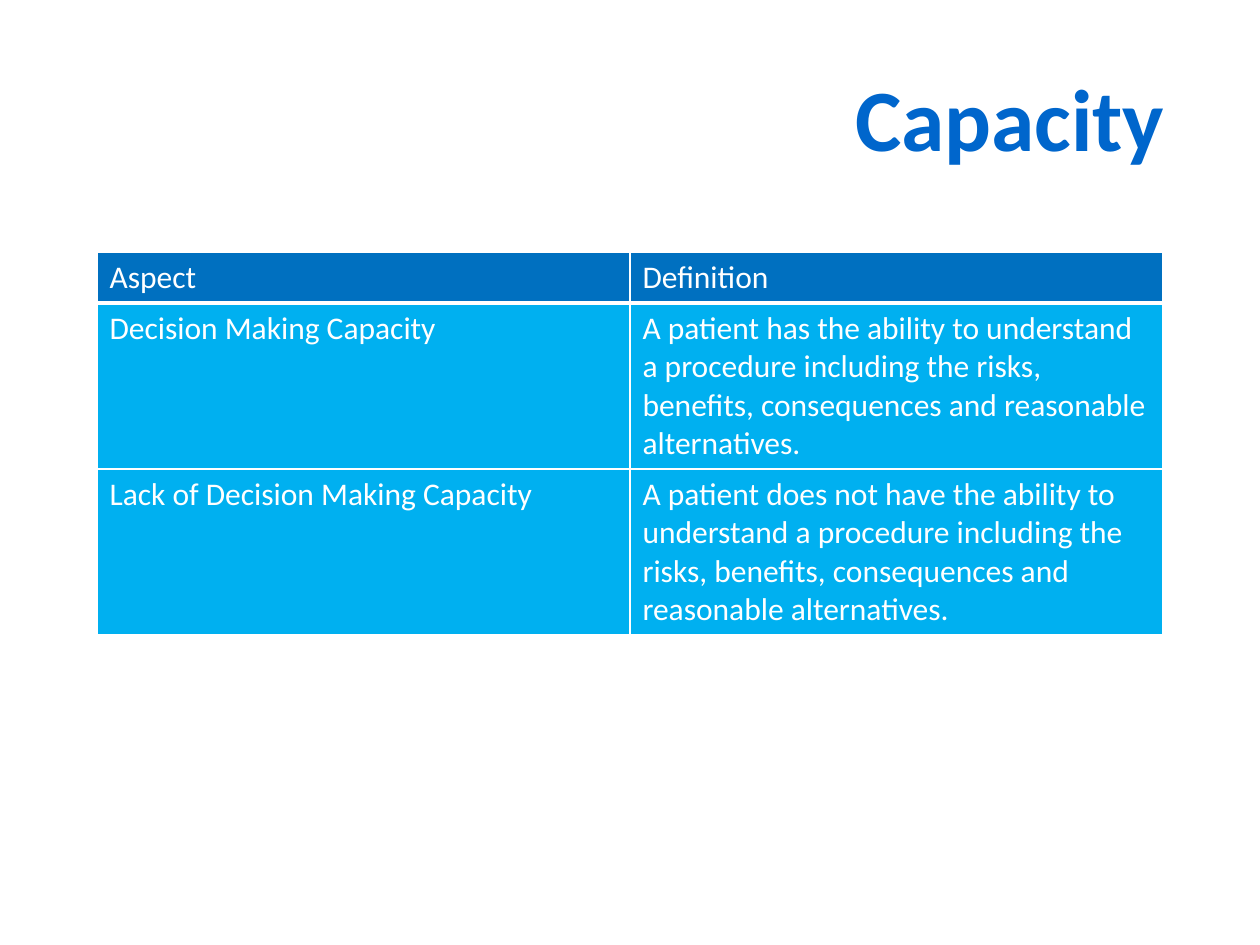
import pptx
import pptx.util
import pptx.dml.color
import pptx.enum.text
import pptx.oxml
import pptx.oxml.ns

SCALE = 914400 / 126  # EMU per px
FONT = "Calibri"
WHITE, TITLE, HEAD, BODY = "FFFFFF", "0066CC", "0070C0", "00B0F0"


def px(size):
    return pptx.util.Emu(round(size * SCALE))


def color(code):
    return pptx.dml.color.RGBColor.from_string(code)


class Deck:
    def __init__(self, width, height):
        self.file = pptx.Presentation()
        self.file.slide_width, self.file.slide_height = px(width), px(height)
        self.slide = self.file.slides.add_slide(self.file.slide_layouts[6])

    def style(self, para, size, code, bold=False):
        font = para.font
        font.name, font.size, font.bold = FONT, pptx.util.Pt(size), bold
        font.color.rgb = color(code)

    def title(self, text, left, top, width, height):
        box = self.slide.shapes.add_textbox(*map(px, (left, top, width, height)))
        frame = box.text_frame
        frame.word_wrap = True
        frame.vertical_anchor = pptx.enum.text.MSO_ANCHOR.MIDDLE
        para = frame.paragraphs[0]
        para.text = text
        para.alignment = pptx.enum.text.PP_ALIGN.RIGHT
        self.style(para, 50, TITLE, bold=True)

    def border(self, cell, low):
        # Low is the width in points of the bottom edge
        props = cell._tc.get_or_add_tcPr()
        for side, width in (("L", 1), ("R", 1), ("T", 1), ("B", low)):
            props.append(pptx.oxml.parse_xml(
                f'<a:ln{side} {pptx.oxml.ns.nsdecls("a")} w="{pptx.util.Pt(width)}">'
                f'<a:solidFill><a:srgbClr val="{WHITE}"/></a:solidFill></a:ln{side}>'))

    def table(self, rows, left, top, width, heights):
        count = len(rows[0])
        table = self.slide.shapes.add_table(
            len(rows), count, px(left), px(top), px(width), px(sum(heights))).table
        for col in table.columns:
            col.width = px(width / count)
        for r, (texts, height) in enumerate(zip(rows, heights)):
            table.rows[r].height = px(height)
            for c, text in enumerate(texts):
                cell = table.cell(r, c)
                self.border(cell, 1 if r else 3)
                cell.fill.solid()
                cell.fill.fore_color.rgb = color(BODY if r else HEAD)
                cell.text = text
                self.style(cell.text_frame.paragraphs[0], 18, WHITE)


def main():
    deck = Deck(1260, 945)

    # Heading
    deck.title("Capacity ", 63, 38, 1134, 157)

    # Definitions
    rows = [
        ("Aspect", "Definition"),
        ("Decision Making Capacity",
         "A patient has the ability to understand a procedure including the risks, "
         "benefits, consequences and reasonable alternatives."),
        ("Lack of Decision Making Capacity",
         "A patient does not have the ability to understand a procedure including "
         "the risks, benefits, consequences and reasonable alternatives."),
    ]
    deck.table(rows, 97, 252, 1066, (51, 166, 166))

    deck.file.save("out.pptx")


if __name__ == "__main__":
    main()
